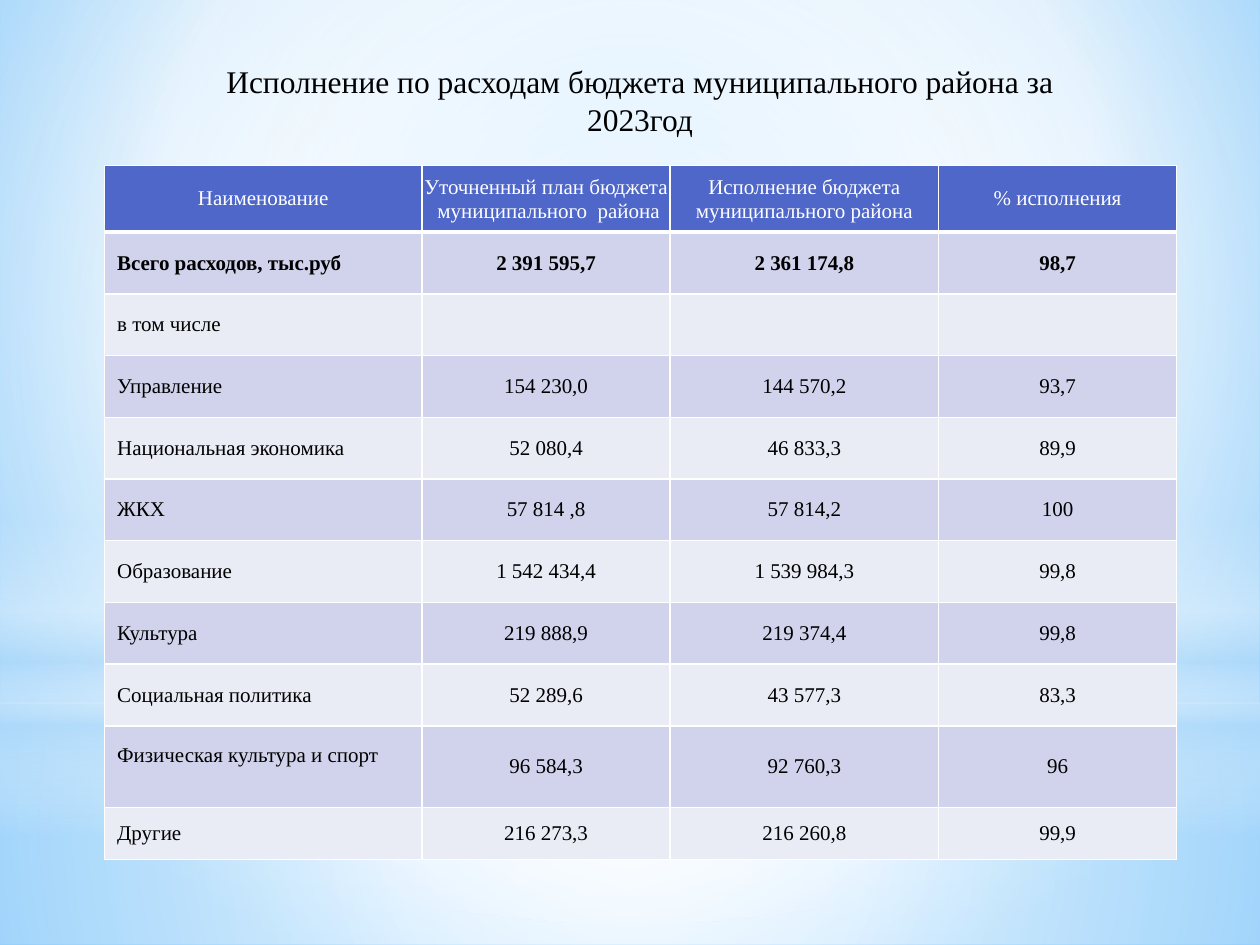
from typing import NamedTuple, Optional

import lxml.etree as etree
import pptx
import pptx.dml.color
import pptx.enum.shapes
import pptx.enum.text
import pptx.oxml.ns
import pptx.util

RGB = pptx.dml.color.RGBColor
SHAPE = pptx.enum.shapes.MSO_SHAPE
ALIGN = pptx.enum.text.PP_ALIGN
ANCHOR = pptx.enum.text.MSO_ANCHOR
qn = pptx.oxml.ns.qn
Pt = pptx.util.Pt
Inches = pptx.util.Inches

FONT = "Times New Roman"
WHITE, BLACK = RGB(255, 255, 255), RGB(0, 0, 0)
HEADER = RGB(0x4E, 0x67, 0xC8)
BANDS = RGB(0xD0, 0xD3, 0xEB), RGB(0xE9, 0xEB, 0xF5)
PALE = RGB(0xB4, 0xDC, 0xFA)
SKY, AZURE = RGB(0x9E, 0xD5, 0xFF), RGB(0x5B, 0xB9, 0xFF)
WIDTH, HEIGHT = Inches(10), Inches(7.5)


class Stop(NamedTuple):
    position: int
    color: RGB
    opacity: int = 100


class Gradient(NamedTuple):
    """A circular gradient around focus (l, t, r, b in percent), or a vertical one."""
    stops: tuple[Stop, ...]
    focus: Optional[tuple[int, int, int, int]] = (50, 50, 50, 50)


class Glow(NamedTuple):
    """A backdrop layer across the slide; top and height are shares of its height."""
    kind: SHAPE
    top: float
    height: float
    gradient: Gradient


BACKGROUND = Gradient((Stop(0, SKY), Stop(60, WHITE), Stop(100, AZURE)), (20, 10, 20, 60))
GLOWS = (
    Glow(SHAPE.RECTANGLE, 0.744, 0.256, Gradient(
        (Stop(0, WHITE, 91), Stop(37, WHITE, 76), Stop(100, PALE, 79)))),
    Glow(SHAPE.RECTANGLE, 0, 0.744, Gradient(
        (Stop(0, WHITE, 89), Stop(48, WHITE, 62), Stop(100, PALE, 79)))),
    Glow(SHAPE.RECTANGLE, 0.55, 0.333, Gradient(
        (Stop(0, WHITE, 0), Stop(29, WHITE, 30), Stop(45, PALE, 40),
         Stop(55, WHITE, 26), Stop(65, PALE, 60), Stop(100, WHITE, 0)), None)),
    Glow(SHAPE.OVAL, 0.233, 0.744, Gradient((Stop(0, WHITE), Stop(56, WHITE, 0)))),
)

TITLE = "Исполнение по расходам бюджета муниципального района за 2023год"
COLUMNS = 2.52, 1.97, 2.13, 1.89
ROWS = 0.53, *[0.49] * 8, 0.65, 0.41
TOTAL_ROW, SPORT_ROW = 1, 9
BUDGET = (
    ("Наименование", "Уточненный план бюджета  муниципального  района",
     "Исполнение бюджета муниципального района", "% исполнения"),
    ("Всего расходов, тыс.руб", "2 391 595,7", "2 361 174,8", "98,7"),
    ("в том числе", "", "", ""),
    ("Управление", "154 230,0", "144 570,2", "93,7"),
    ("Национальная экономика", "52 080,4", "46 833,3", "89,9"),
    ("ЖКХ", "57 814 ,8", "57 814,2", "100"),
    ("Образование", "1 542 434,4", "1 539 984,3", "99,8"),
    ("Культура", "219 888,9", "219 374,4", "99,8"),
    ("Социальная политика", "52 289,6", "43 577,3", "83,3"),
    ("Физическая культура и спорт", "96 584,3", "92 760,3", "96"),
    ("Другие", "216 273,3", "216 260,8", "99,9"),
)


def add_color(parent, color: RGB, opacity: int = 100) -> None:
    clr = etree.SubElement(parent, qn("a:srgbClr"), val=str(color))
    if opacity < 100:
        etree.SubElement(clr, qn("a:alpha"), val=str(opacity * 1000))


def apply_gradient(fill, element, gradient: Gradient) -> None:
    """Fill in the first gradient found below element with the given stops."""
    fill.gradient()
    grad = element.find(".//" + qn("a:gradFill"))
    for child in list(grad):
        grad.remove(child)
    stops = etree.SubElement(grad, qn("a:gsLst"))
    for stop in gradient.stops:
        gs = etree.SubElement(stops, qn("a:gs"), pos=str(stop.position * 1000))
        add_color(gs, stop.color, stop.opacity)
    if gradient.focus is None:
        etree.SubElement(grad, qn("a:lin"), ang="5400000", scaled="0")
    else:
        circle = etree.SubElement(grad, qn("a:path"), path="circle")
        sides = {side: str(v * 1000) for side, v in zip("ltrb", gradient.focus)}
        etree.SubElement(circle, qn("a:fillToRect"), **sides)


def add_glow(s, glow: Glow) -> None:
    sp = s.shapes.add_shape(glow.kind, 0, int(HEIGHT * glow.top),
                            WIDTH, int(HEIGHT * glow.height))
    sp.shadow.inherit = False
    sp.line.fill.background()
    apply_gradient(sp.fill, sp._element, glow.gradient)


def format_text(tf, size: int, color: RGB, align: ALIGN, bold: bool = False) -> None:
    for p in tf.paragraphs:
        p.alignment = align
        for r in p.runs:
            r.font.name, r.font.size, r.font.bold = FONT, Pt(size), bold
            r.font.color.rgb = color


def set_borders(cell, top: int, bottom: int) -> None:
    tc_pr = cell._tc.get_or_add_tcPr()
    for i, (side, width) in enumerate(zip("LRTB", (1, 1, top, bottom))):
        ln = etree.Element(qn("a:ln" + side), w=str(Pt(width)))
        add_color(etree.SubElement(ln, qn("a:solidFill")), WHITE)
        tc_pr.insert(i, ln)


def fill_cell(cell, row: int, column: int) -> None:
    is_header = row == 0
    cell.text = BUDGET[row][column]
    cell.vertical_anchor = ANCHOR.MIDDLE
    cell.fill.solid()
    cell.fill.fore_color.rgb = HEADER if is_header else BANDS[(row - 1) % 2]
    align = ALIGN.CENTER if is_header or column else ALIGN.LEFT
    format_text(cell.text_frame, 12, WHITE if is_header else BLACK, align, row == TOTAL_ROW)
    if is_header and column in (1, 2):
        cell.margin_left = cell.margin_right = cell.margin_top = Inches(0.01)
        cell.margin_bottom = 0
    if row == SPORT_ROW and column == 0:
        cell.margin_bottom = Inches(0.23)
    set_borders(cell, 3 if row == TOTAL_ROW else 1, 3 if is_header else 1)


def add_budget_table(s) -> None:
    frame = s.shapes.add_table(len(ROWS), len(COLUMNS), int(WIDTH * 0.083), int(HEIGHT * 0.175),
                               Inches(sum(COLUMNS)), Inches(sum(ROWS)))
    table = frame.table
    for column, width in zip(table.columns, COLUMNS):
        column.width = Inches(width)
    for i, height in enumerate(ROWS):
        table.rows[i].height = Inches(height)
        for j in range(len(COLUMNS)):
            fill_cell(table.cell(i, j), i, j)


def place_title(s) -> None:
    sp = s.shapes.title
    s.shapes._spTree.append(sp._element)  # in front of the glows
    sp.left, sp.top = int(WIDTH * 0.13), int(HEIGHT * 0.059)
    sp.width, sp.height = int(WIDTH * 0.756), int(HEIGHT * 0.095)
    tf = sp.text_frame
    tf.text = TITLE
    tf.word_wrap = True
    tf.auto_size = pptx.enum.text.MSO_AUTO_SIZE.SHAPE_TO_FIT_TEXT
    tf.vertical_anchor = ANCHOR.TOP
    format_text(tf, 18, BLACK, ALIGN.CENTER)


def main() -> None:
    prs = pptx.Presentation()
    prs.slide_width, prs.slide_height = WIDTH, HEIGHT
    s = prs.slides.add_slide(prs.slide_layouts[5])
    apply_gradient(s.background.fill, s._element, BACKGROUND)
    for glow in GLOWS:
        add_glow(s, glow)
    place_title(s)
    add_budget_table(s)
    prs.save("out.pptx")


if __name__ == "__main__":
    main()
